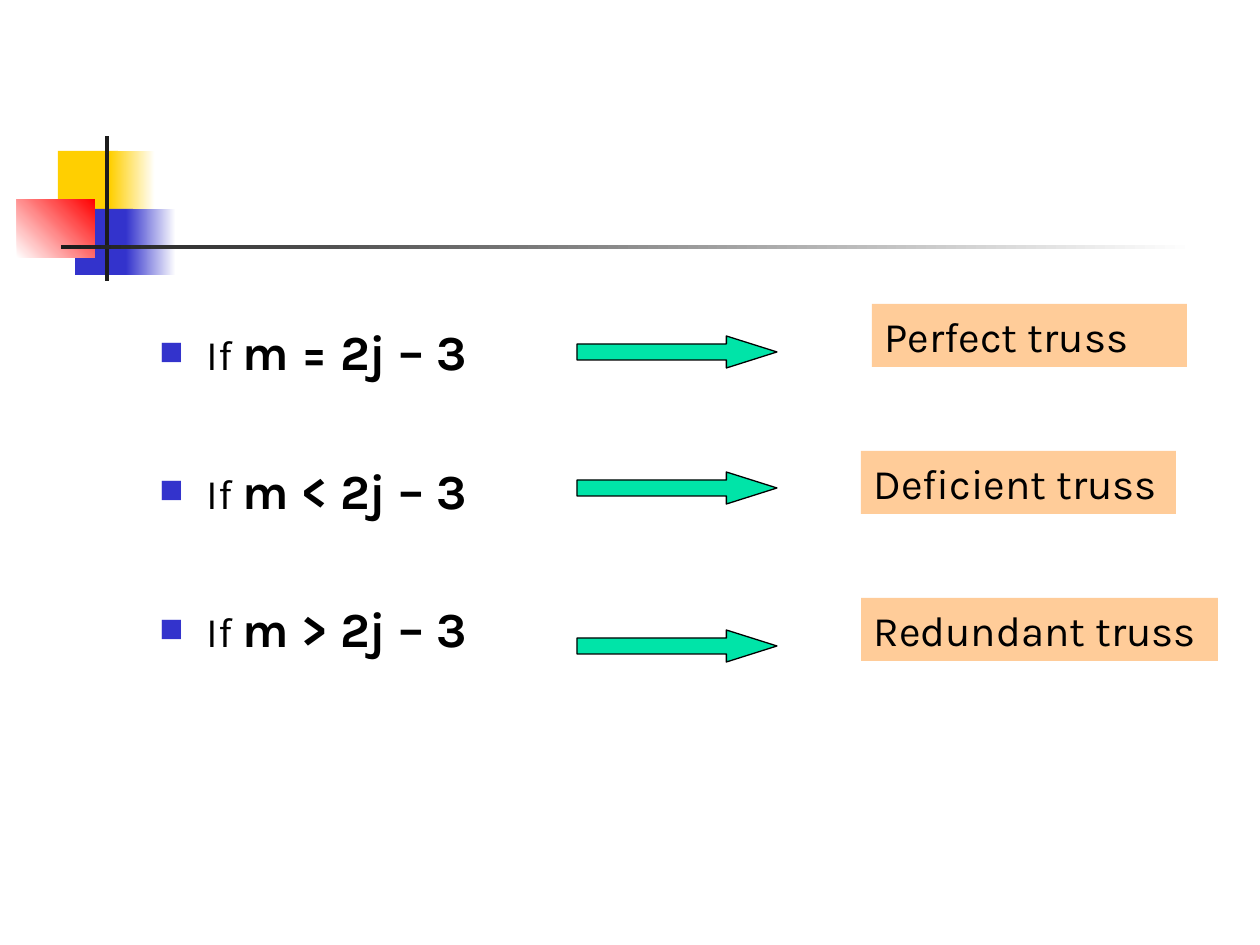
from pptx import Presentation
from pptx.dml.color import RGBColor as Rgb
from pptx.enum.shapes import MSO_SHAPE as Kind
from pptx.enum.text import MSO_ANCHOR as Anchor, MSO_AUTO_SIZE as Fit, PP_ALIGN as Align
from pptx.oxml.ns import qn
from pptx.util import Emu, Pt
from lxml.etree import SubElement as Sub

SCALE = 914400 / 126
HUES = {
    "gold": "FFCF01", "blue": "3333CC", "red": "FF0000", "white": "FFFFFF",
    "dark": "1C1C1C", "black": "000000", "green": "00E4A8", "peach": "FFCC99",
}
FONT = {"name": "Karla", "size": Pt(24), "bold": False}
BOLD = FONT | {"size": Pt(28), "bold": True}


def px(num):
    return Emu(round(num * SCALE))


def hue(name):
    return Rgb.from_string(HUES[name])


def style(run, form):
    for key, val in form.items():
        setattr(run.font, key, val)
    run.font.color.rgb = hue("black")


def add(slide, kind, box, fill, angle=0):
    """Add a plain shape; a pair of colours gives a gradient."""
    shape = slide.shapes.add_shape(kind, *map(px, box))
    shape.shadow.inherit = False
    shape.line.fill.background()
    if isinstance(fill, tuple):
        shape.fill.gradient()
        shape.fill.gradient_angle = angle
        for stop, name in zip(shape.fill.gradient_stops, fill):
            stop.color.rgb = hue(name)
    else:
        shape.fill.solid()
        shape.fill.fore_color.rgb = hue(fill)
    return shape


def motif(slide, left, top):
    """Overlapping squares crossed by two bars."""
    parts = [
        ((41, 15, 60, 66), "gold", 0),
        ((93, 15, 45, 66), ("gold", "white"), 0),
        ((58, 73, 58, 66), "blue", 0),
        ((109, 73, 50, 66), ("blue", "white"), 0),
        ((0, 63, 78, 59), ("white", "red"), 45),
        ((88, 0, 4, 145), "dark", 0),
        ((44, 109, 1134, 4), ("dark", "white"), 0),
    ]
    for (x, y, wide, high), fill, angle in parts:
        add(slide, Kind.RECTANGLE, (left + x, top + y, wide, high), fill, angle)


def bullet(para):
    props = para._p.get_or_add_pPr()
    props.set("marL", str(px(47)))
    props.set("indent", str(px(-47)))
    tint = Sub(props, qn("a:buClr"))
    Sub(tint, qn("a:srgbClr"), val=HUES["blue"])
    Sub(props, qn("a:buSzPct"), val="60000")
    Sub(props, qn("a:buFont"), typeface="Karla")
    Sub(props, qn("a:buChar"), char="■")


def rules(body, box, signs):
    """Bulleted conditions, evenly spaced."""
    body.left, body.top, body.width, body.height = map(px, box)
    frame = body.text_frame
    frame.auto_size = Fit.NONE
    frame.vertical_anchor = Anchor.TOP
    for num, sign in enumerate(signs):
        para = frame.add_paragraph() if num else frame.paragraphs[0]
        para.space_before = Pt(45.7 if num else 0)
        bullet(para)
        for text, form in (("If ", FONT), (f"m {sign} 2j – 3", BOLD)):
            run = para.add_run()
            run.text = text
            style(run, form)


def arrow(slide, box):
    shape = add(slide, Kind.RIGHT_ARROW, box, "green")
    shape.adjustments[1] = 1.58
    shape.line.color.rgb = hue("black")
    shape.line.width = Pt(0.75)


def label(slide, box, text):
    frame = add(slide, Kind.RECTANGLE, box, "peach").text_frame
    frame.word_wrap = True
    frame.vertical_anchor = Anchor.TOP
    para = frame.paragraphs[0]
    para.alignment = Align.LEFT
    run = para.add_run()
    run.text = text
    style(run, FONT)


def main():
    deck = Presentation()
    deck.slide_width, deck.slide_height = px(1260), px(945)
    slide = deck.slides.add_slide(deck.slide_layouts[1])
    title = slide.shapes.title
    title.element.getparent().remove(title.element)

    motif(slide, 17, 136)
    rules(slide.placeholders[1], (147, 315, 1071, 567), "=<>")

    # Each condition leads to a type of truss
    rows = [
        (336, (872, 304, 315, 63), "Perfect truss"),
        (472, (861, 451, 315, 63), "Deficient truss"),
        (630, (861, 598, 357, 63), "Redundant truss"),
    ]
    for top, box, text in rows:
        arrow(slide, (577, top, 200, 32))
        label(slide, box, text)

    deck.save("out.pptx")


if __name__ == "__main__":
    main()
